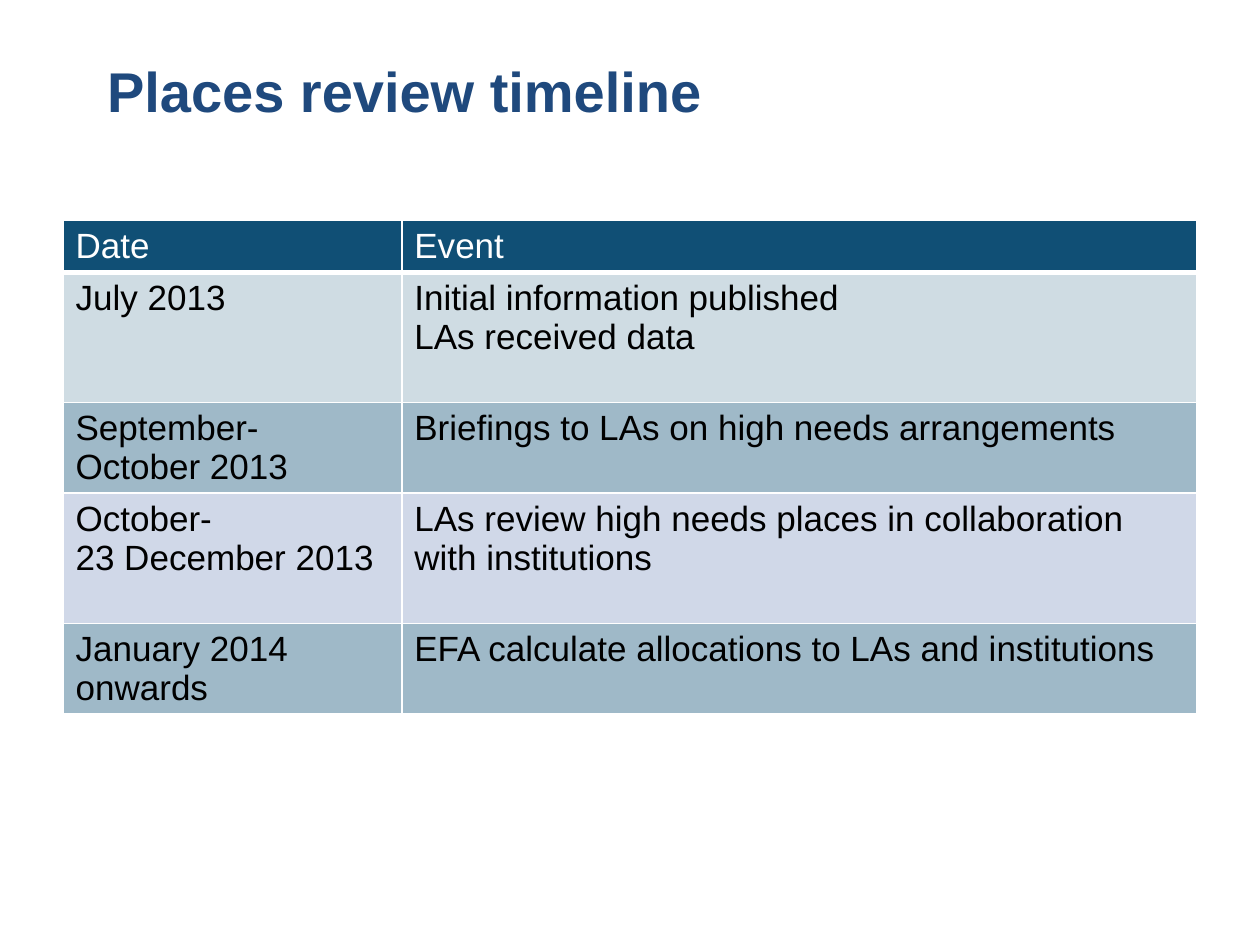
from lxml import etree
from pptx import Presentation
from pptx.dml.color import RGBColor
from pptx.enum.text import MSO_ANCHOR, PP_ALIGN
from pptx.oxml.ns import qn
from pptx.util import Pt

LEFT = PP_ALIGN.LEFT
TOP, MIDDLE = MSO_ANCHOR.TOP, MSO_ANCHOR.MIDDLE

NAVY = RGBColor(0x1F, 0x49, 0x7D)
TEAL = RGBColor(0x10, 0x4F, 0x75)
PALE = RGBColor(0xCF, 0xDC, 0xE3)
MID = RGBColor(0x9F, 0xB9, 0xC8)
LILAC = RGBColor(0xD0, 0xD8, 0xE8)
WHITE = RGBColor(0xFF, 0xFF, 0xFF)
BLACK = RGBColor(0, 0, 0)

TITLE = "Places review timeline"
# Date, event, row fill, row height in points
TIMELINE = [
    ("Date", "Event", TEAL, 29.2),
    ("July 2013", "Initial information published\nLAs received data", PALE, 74.4),
    ("September- October 2013", "Briefings to LAs on high needs arrangements", MID, 51.5),
    ("October-\n23 December 2013",
     "LAs review high needs places in collaboration with institutions", LILAC, 74.4),
    ("January 2014 onwards", "EFA calculate allocations to LAs and institutions", MID, 51.5),
]
COLUMN_WIDTHS = (193.6, 454.4)
TABLE_LEFT, TABLE_TOP = 36, 126


def write(frame, text, size=20, color=BLACK, bold=False):
    frame.text = text
    frame.word_wrap = True
    for paragraph in frame.paragraphs:
        paragraph.alignment = LEFT
        font = paragraph.font
        font.name, font.size, font.bold = "Arial", Pt(size), bold
        font.color.rgb = color


def add_borders(cell, bottom=1):
    """Rule the cell in white; call before filling, as lines precede the fill."""
    properties = cell._tc.get_or_add_tcPr()
    for side, width in (("L", 1), ("R", 1), ("T", 1), ("B", bottom)):
        line = etree.SubElement(properties, qn(f"a:ln{side}"), w=str(Pt(width)))
        solid = etree.SubElement(line, qn("a:solidFill"))
        etree.SubElement(solid, qn("a:srgbClr"), val=str(WHITE))


def add_timeline(slide):
    heights = [row[-1] for row in TIMELINE]
    table = slide.shapes.add_table(
        len(TIMELINE), len(COLUMN_WIDTHS), Pt(TABLE_LEFT), Pt(TABLE_TOP),
        Pt(sum(COLUMN_WIDTHS)), Pt(sum(heights))).table
    for column, width in zip(table.columns, COLUMN_WIDTHS):
        column.width = Pt(width)
    for index, (date, event, fill, height) in enumerate(TIMELINE):
        is_header = index == 0
        table.rows[index].height = Pt(height)
        for cell, text in zip(table.rows[index].cells, (date, event)):
            add_borders(cell, bottom=3 if is_header else 1)
            cell.fill.solid()
            cell.fill.fore_color.rgb = fill
            cell.vertical_anchor = TOP
            write(cell.text_frame, text, color=WHITE if is_header else BLACK)


def main():
    prs = Presentation()
    prs.slide_width, prs.slide_height = Pt(720), Pt(540)
    slide = prs.slides.add_slide(prs.slide_layouts[5])

    title = slide.shapes.title
    title.left, title.top, title.width, title.height = Pt(54), Pt(26), Pt(612), Pt(51)
    write(title.text_frame, TITLE, size=32, color=NAVY, bold=True)
    title.text_frame.vertical_anchor = MIDDLE

    add_timeline(slide)
    prs.save("out.pptx")


if __name__ == "__main__":
    main()
